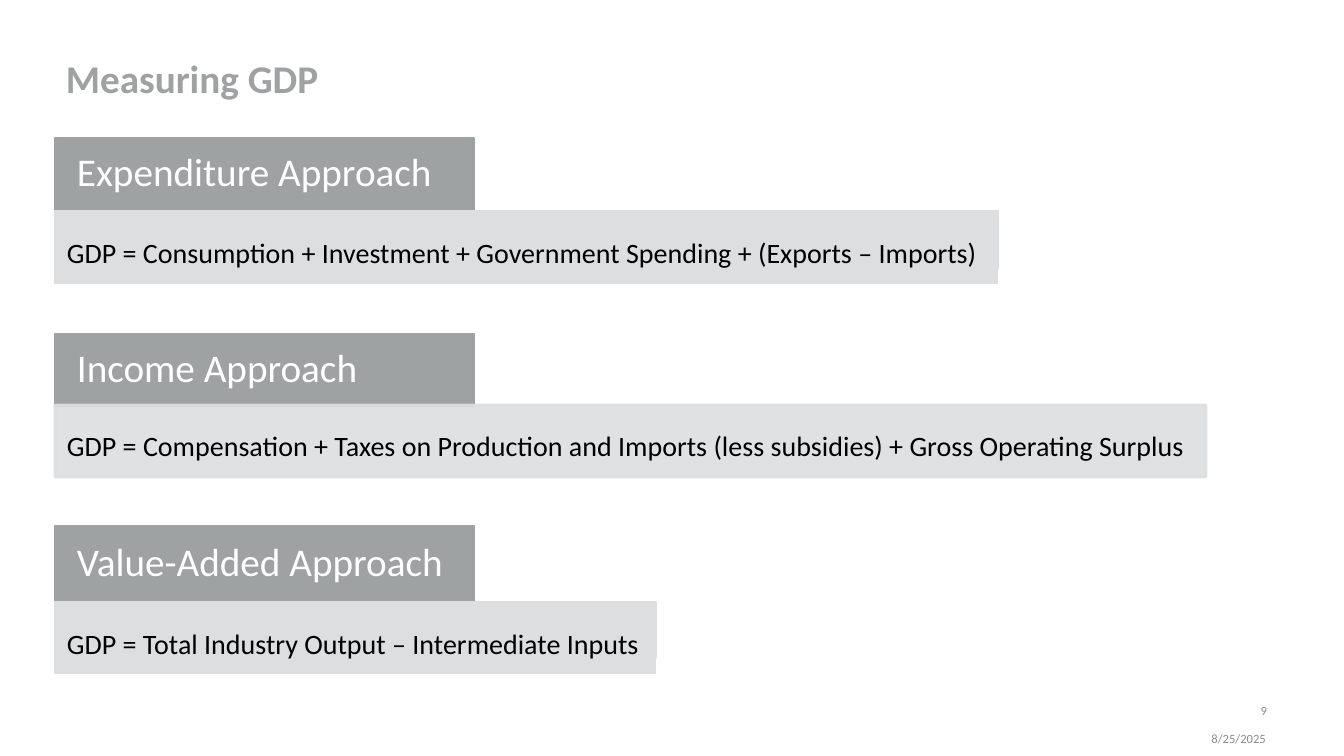
from lxml import etree
from pptx import Presentation
from pptx.dml.color import RGBColor
from pptx.enum.shapes import MSO_SHAPE as Shape
from pptx.enum.text import MSO_ANCHOR as Anchor, MSO_AUTO_SIZE as AutoSize, PP_ALIGN as Align
from pptx.oxml.ns import qn
from pptx.util import Emu, Pt

# Content: heading, formula, and the places of their parts in px
TITLE = "Measuring GDP"
DATE = "8/25/2025"
PAGE = "9"
# (heading, top, height), (formula, width), panel (top, height), text (top, height), opacity in %
APPROACHES = [
    (("Expenditure Approach", 138, 72),
     ("GDP = Consumption + Investment + Government Spending + (Exports – Imports)", 943),
     (211, 58), (227, 57), 100),
    (("Income Approach", 334, 72),
     ("GDP = Compensation + Taxes on Production and Imports (less subsidies) + Gross Operating Surplus", 1151),
     (405, 72), (420, 84), 90),
    (("Value-Added Approach", 526, 75),
     ("GDP = Total Industry Output – Intermediate Inputs", 601),
     (602, 56), (618, 56), 100),
]
LEFT, HEADING_WIDTH = 55, 419
HEADING_INSETS = (22, 12, 22, 12)
FORMULA_INSETS = (12, 12, 16, 17)
DEFAULT_INSETS = (10, 5, 10, 5)

FONT = "Calibri"
GRAY = RGBColor(0x9E, 0xA2, 0xA2)
PALE = RGBColor(0xDC, 0xDE, 0xDF)
FOOTER = RGBColor(0x8C, 0x8C, 0x8C)
WHITE = RGBColor(0xFF, 0xFF, 0xFF)
BLACK = RGBColor(0x00, 0x00, 0x00)


def px(length):
    return Emu(round(length * 914400 / 100.8))


def box(left, top, width, height):
    return [px(length) for length in (left, top, width, height)]


def write(shape, text, size, color, insets=DEFAULT_INSETS, anchor=Anchor.MIDDLE,
          align=Align.LEFT, spacing=None, bold=False):
    frame = shape.text_frame
    frame.text = text
    frame.word_wrap = True
    frame.auto_size = AutoSize.NONE
    frame.vertical_anchor = anchor
    frame.margin_left, frame.margin_top, frame.margin_right, frame.margin_bottom = map(px, insets)
    paragraph = frame.paragraphs[0]
    paragraph.alignment = align
    paragraph.line_spacing = spacing
    font = paragraph.runs[0].font
    font.name, font.size, font.bold = FONT, Pt(size), bold
    font.color.rgb = color


def add_panel(slide, bounds, color, line_width, opacity=100):
    panel = slide.shapes.add_shape(Shape.RECTANGLE, *bounds)
    panel.shadow.inherit = False
    panel.fill.solid()
    panel.fill.fore_color.rgb = color
    panel.line.color.rgb = color
    panel.line.width = Pt(line_width)
    if opacity < 100:
        for color_element in panel.element.spPr.iter(qn("a:srgbClr")):
            etree.SubElement(color_element, qn("a:alpha")).set("val", str(opacity * 1000))
    return panel


def main():
    presentation = Presentation()
    presentation.slide_width, presentation.slide_height = px(1344), px(756)
    slide = presentation.slides.add_slide(presentation.slide_layouts[5])

    # Title
    title = slide.shapes.title
    title.left, title.top, title.width, title.height = box(56, 25, 1019, 101)
    write(title, TITLE, 28, GRAY, insets=(10, 5, 10, 0), bold=True)

    # Date and page number
    for text, bounds in ((DATE, (1131, 729, 145, 18)), (PAGE, (1198, 699, 79, 22))):
        write(slide.shapes.add_textbox(*box(*bounds)), text, 9, FOOTER, align=Align.RIGHT)

    # Approaches: a heading bar above a formula panel
    for (heading, top, height), (formula, width), panel, text_area, opacity in APPROACHES:
        bar = add_panel(slide, box(LEFT, top, HEADING_WIDTH, height), GRAY, 2)
        write(bar, heading, 28, WHITE, HEADING_INSETS, spacing=0.9)

        add_panel(slide, box(LEFT, panel[0], width, panel[1]), PALE, 2, opacity)
        text_bounds = box(LEFT, text_area[0], width, text_area[1])
        if opacity < 100:
            text_box = slide.shapes.add_textbox(*text_bounds)
        else:
            text_box = add_panel(slide, text_bounds, PALE, 0.75)
        write(text_box, formula, 20, BLACK, FORMULA_INSETS, Anchor.TOP, spacing=0.9)

    presentation.save("out.pptx")


if __name__ == "__main__":
    main()
